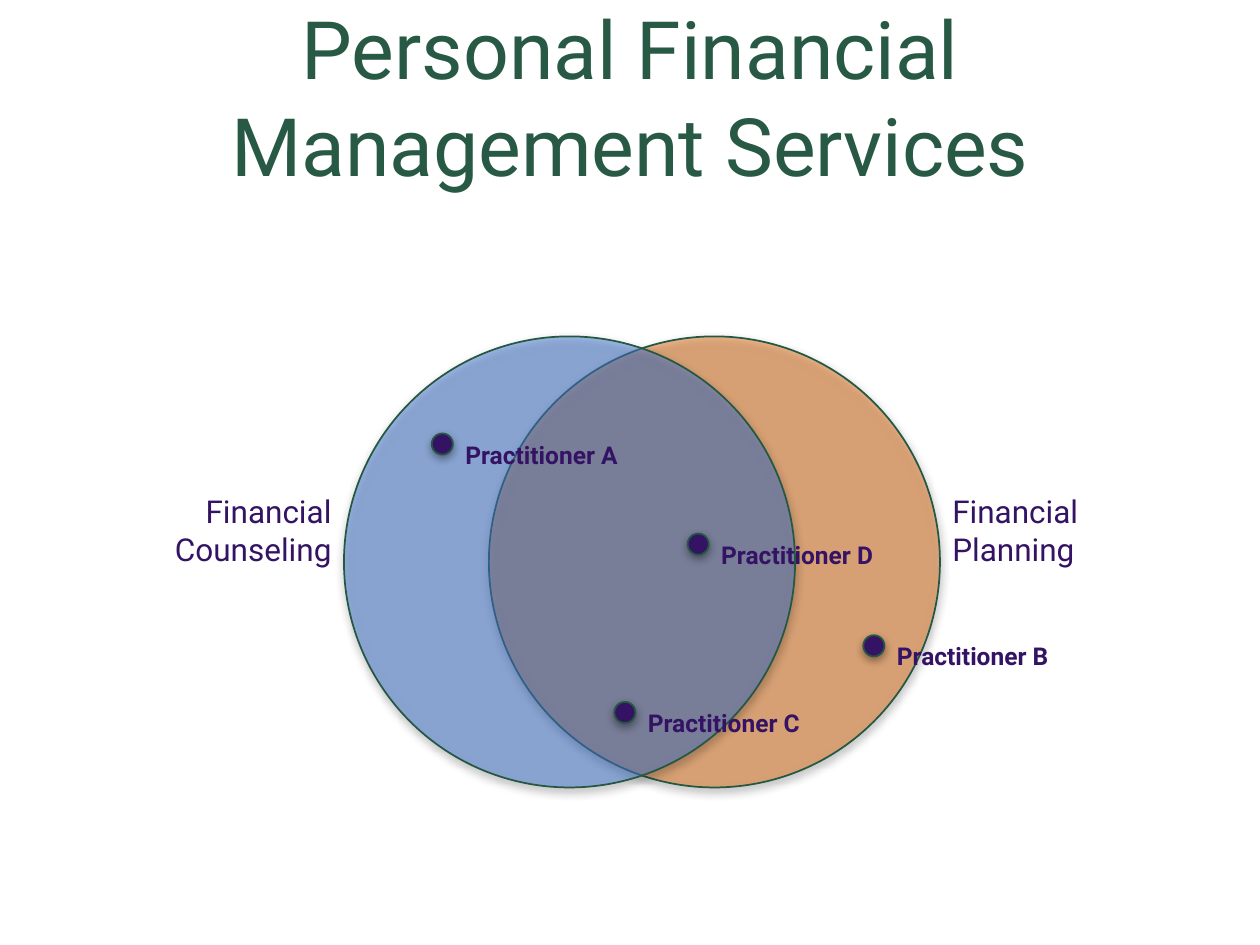
import pptx
import pptx.util
import pptx.dml.color
import pptx.enum.shapes
import pptx.enum.text
import pptx.oxml
import pptx.oxml.ns

Pt = pptx.util.Pt
ALIGN = pptx.enum.text.PP_ALIGN
A = "{http://schemas.openxmlformats.org/drawingml/2006/main}"
PURPLE, GREEN, OUTLINE = "341364", "275944", "255843"
color = pptx.dml.color.RGBColor.from_string


def add_circle(shapes, left, top, size, fill, opacity=100):
    """Outlined circle with a soft shadow falling straight down."""
    circle = shapes.add_shape(pptx.enum.shapes.MSO_SHAPE.OVAL,
                              Pt(left), Pt(top), Pt(size), Pt(size))
    circle.fill.solid()
    circle.fill.fore_color.rgb = color(fill)
    circle.line.color.rgb = color(OUTLINE)
    circle.line.width = Pt(1)
    properties = circle.element.spPr
    if opacity < 100:
        tint = properties.find(f"{A}solidFill/{A}srgbClr")
        tint.append(pptx.oxml.parse_xml(
            f'<a:alpha {pptx.oxml.ns.nsdecls("a")} val="{opacity * 1000}"/>'))
    properties.append(pptx.oxml.parse_xml(
        f'<a:effectLst {pptx.oxml.ns.nsdecls("a")}>'
        f'<a:outerShdw blurRad="{Pt(5)}" dist="{Pt(2)}" dir="5400000" rotWithShape="0">'
        '<a:srgbClr val="000000"><a:alpha val="40000"/></a:srgbClr>'
        '</a:outerShdw></a:effectLst>'))


def add_label(shapes, text, left, top, width, height, size, bold=False, align=ALIGN.LEFT):
    box = shapes.add_textbox(Pt(left), Pt(top), Pt(width), Pt(height))
    frame = box.text_frame
    frame.text = text
    frame.word_wrap = False
    frame.auto_size = pptx.enum.text.MSO_AUTO_SIZE.SHAPE_TO_FIT_TEXT
    for para in frame.paragraphs:
        para.alignment = align
        for span in para.runs:
            span.font.name = "Roboto"
            span.font.size = Pt(size)
            span.font.bold = bold
            span.font.color.rgb = color(PURPLE)


deck = pptx.Presentation()
deck.slide_width, deck.slide_height = Pt(720), Pt(540)
page = deck.slides.add_slide(deck.slide_layouts[5])

# Title
title = page.shapes.title
title.left, title.top, title.width, title.height = Pt(43.2), Pt(8.64), Pt(633.6), Pt(105.12)
title.text_frame.text = "Personal Financial Management Services"
title.text_frame.word_wrap = True
title.text_frame.auto_size = pptx.enum.text.MSO_AUTO_SIZE.NONE
title.text_frame.vertical_anchor = pptx.enum.text.MSO_ANCHOR.BOTTOM
para = title.text_frame.paragraphs[0]
para.alignment = ALIGN.CENTER
span = para.runs[0]
span.font.name = "Roboto"
span.font.size = Pt(46)
span.font.color.rgb = color(GREEN)

# Overlapping service circles, planning behind counseling
for left, fill in ((279.36, "E2751D"), (196.56, "457BD4")):
    add_circle(page.shapes, left, 192.24, 257.76, fill, opacity=50)

# Service names on the outer sides
add_label(page.shapes, "Financial\nCounseling", 87.12, 277.92, 109.44, 50.9, 18, align=ALIGN.RIGHT)
add_label(page.shapes, "Financial\nPlanning", 537.12, 277.92, 92.16, 50.9, 18)

# Practitioners: a dot with its name to the right
dot = 12.1
for letter, left, top in (("A", 246.7, 247.7), ("B", 493.3, 363),
                          ("C", 351, 401.1), ("D", 392.9, 304.9)):
    group = page.shapes.add_group_shape()
    add_circle(group.shapes, left, top, dot, PURPLE)
    add_label(group.shapes, f"Practitioner {letter}", left + dot, top, 110, 24.2, 14, bold=True)

deck.save("out.pptx")
